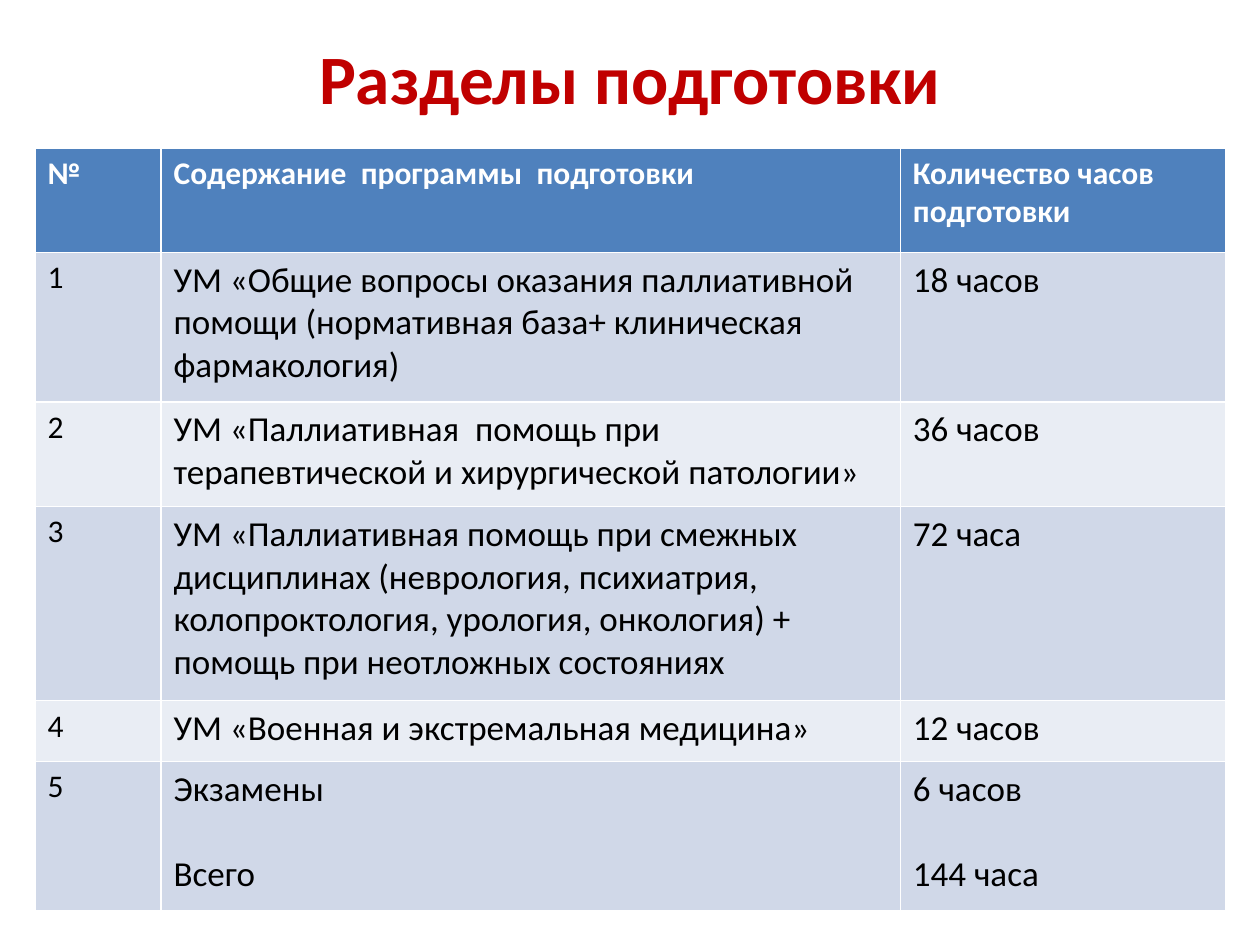
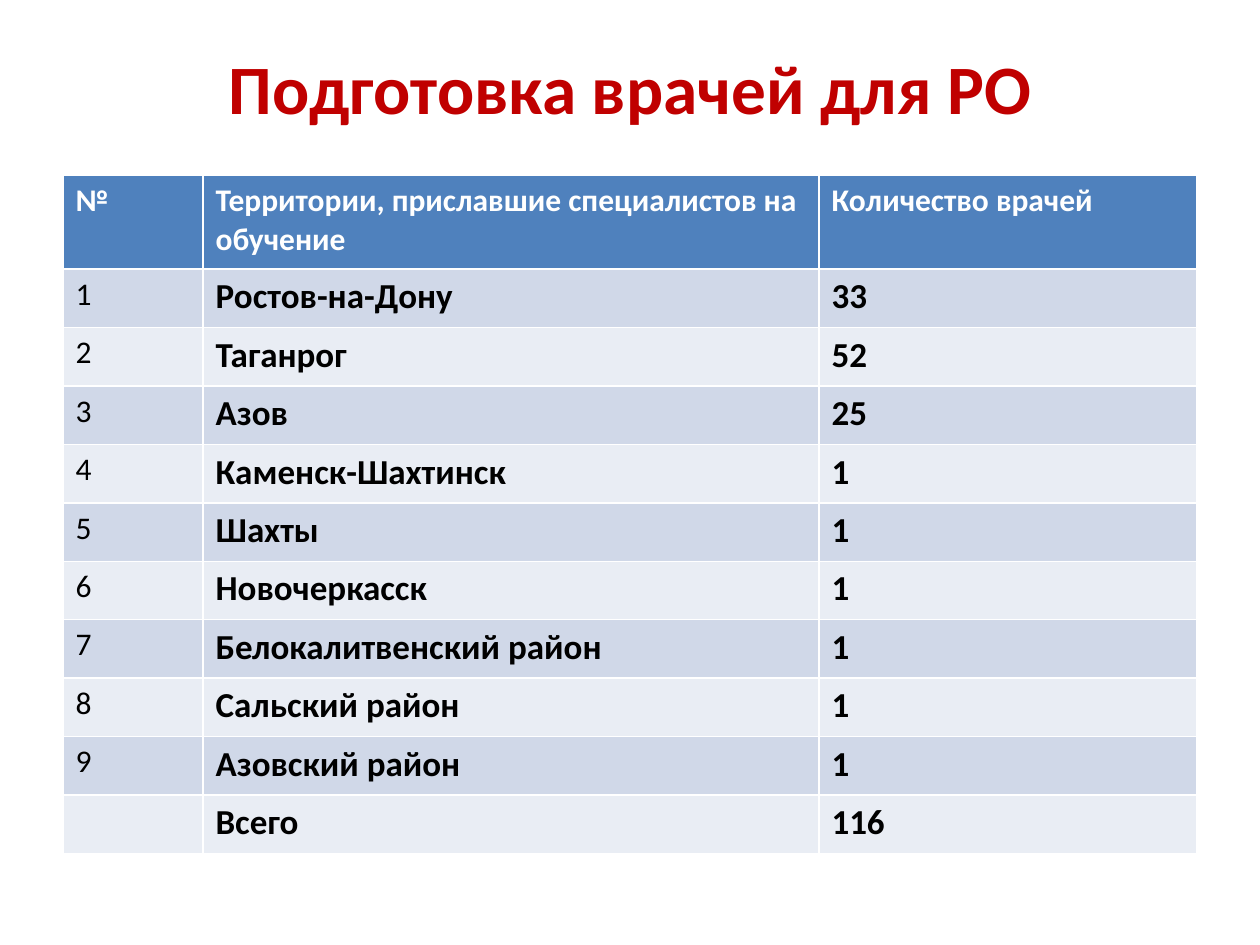
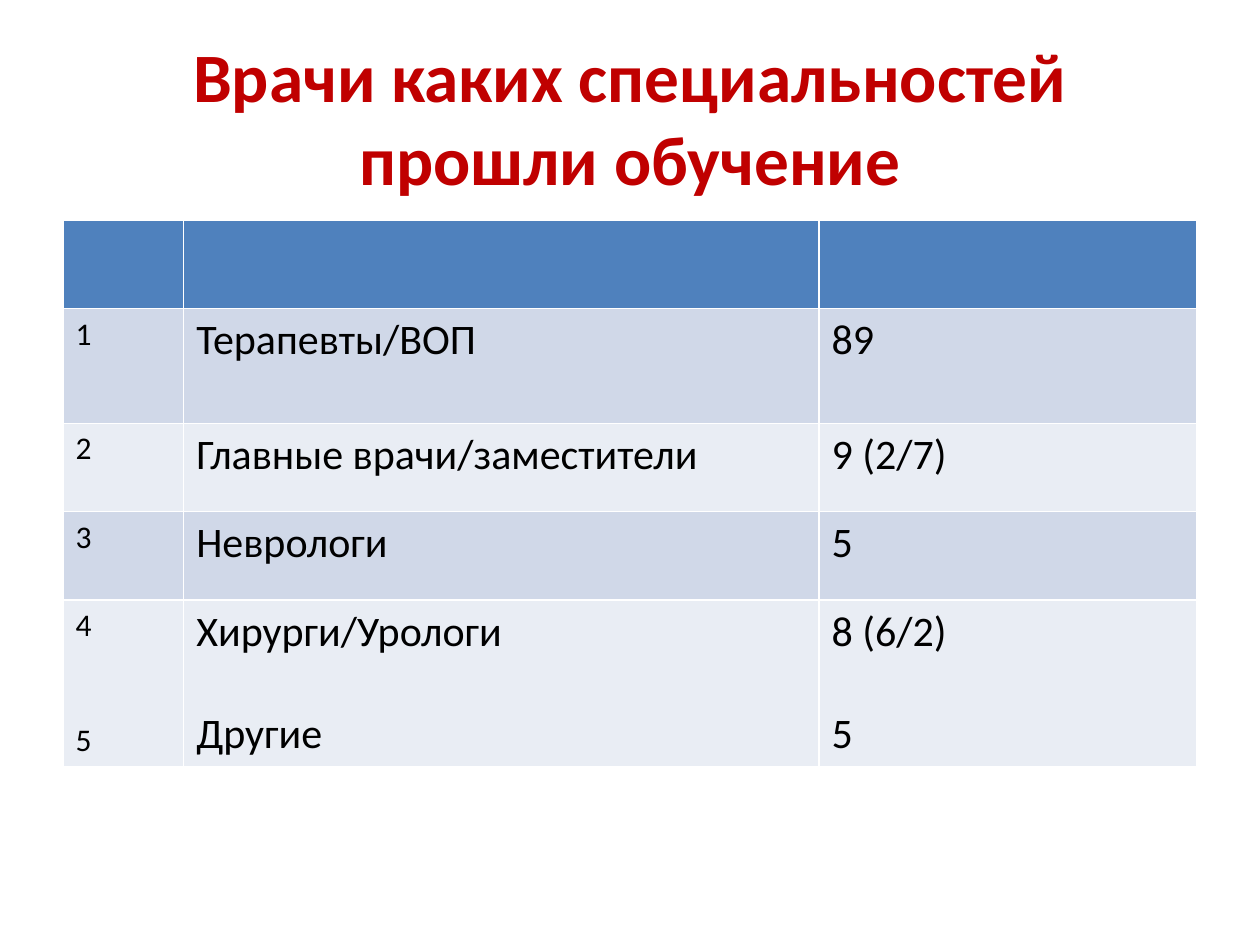
from dataclasses import dataclass

from pptx import Presentation
from pptx.dml.color import RGBColor
from pptx.enum.text import MSO_ANCHOR, MSO_AUTO_SIZE, PP_ALIGN
from pptx.util import Pt

MIDDLE = MSO_ANCHOR.MIDDLE
NO_FIT = MSO_AUTO_SIZE.NONE
LEFT, CENTER = PP_ALIGN.LEFT, PP_ALIGN.CENTER
FONT = "Calibri"
COLORS = {
    "title": "C00000",
    "header": "4F81BD",
    "odd": "D0D8E8",
    "even": "E9EDF4",
    "light": "FFFFFF",
    "dark": "000000",
}
TITLE_ONLY = 5
TITLE_LEFT, TITLE_TOP, TITLE_WIDTH = 36, 21.6, 648
TITLE_SIZE = 39.6
NUMBER_SIZE = 18
LINE_HEIGHT = 1.22


@dataclass(frozen=True)
class TableSlide:
    """A title above a numbered table."""

    title: str
    title_height: float
    left: float
    top: float
    columns: tuple[float, ...]
    heights: tuple[float, ...]
    rows: tuple[tuple[str, ...], ...]
    entry_size: float
    entry_bold: bool = False


SLIDES = (
    TableSlide(
        title="Разделы подготовки",
        title_height=44,
        left=20,
        top=84.5,
        columns=(72, 422.5, 186),
        heights=(59.75, 85.5, 59.75, 111, 34.75, 85.5),
        rows=(
            ("№", "Содержание  программы  подготовки", "Количество часов подготовки"),
            ("1", "УМ «Общие вопросы оказания паллиативной помощи "
                  "(нормативная база+ клиническая фармакология)", "18 часов"),
            ("2", "УМ «Паллиативная  помощь при терапевтической "
                  "и хирургической патологии»", "36 часов"),
            ("3", "УМ «Паллиативная помощь при смежных дисциплинах "
                  "(неврология, психиатрия, колопроктология, урология, онкология) "
                  "+ помощь при неотложных состояниях", "72 часа"),
            ("4", "УМ «Военная и экстремальная медицина»", "12 часов"),
            ("5", "Экзамены\nВсего", "6 часов\n144 часа"),
        ),
        entry_size=20,
    ),
    TableSlide(
        title="Подготовка врачей для РО",
        title_height=55.5,
        left=36,
        top=100.25,
        columns=(80, 352, 216),
        heights=(53.5,) + (33.4,) * 10,
        rows=(
            ("№", "Территории, приславшие специалистов на обучение", "Количество врачей"),
            ("1", "Ростов-на-Дону", "33"),
            ("2", "Таганрог", "52"),
            ("3", "Азов", "25"),
            ("4", "Каменск-Шахтинск", "1"),
            ("5", "Шахты", "1"),
            ("6", "Новочеркасск", "1"),
            ("7", "Белокалитвенский район", "1"),
            ("8", "Сальский район", "1"),
            ("9", "Азовский район", "1"),
            ("", "Всего", "116"),
        ),
        entry_size=20,
        entry_bold=True,
    ),
    TableSlide(
        title="Врачи каких специальностей прошли обучение",
        title_height=90,
        left=36,
        top=126,
        columns=(69, 363, 216),
        heights=(50.4, 65.6, 50.4, 50.4, 95),
        rows=(
            ("", "", ""),
            ("1", "Терапевты/ВОП", "89"),
            ("2", "Главные врачи/заместители", "9 (2/7)"),
            ("3", "Неврологи", "5"),
            ("4\n5", "Хирурги/Урологи\nДругие", "8 (6/2)\n5"),
        ),
        entry_size=24,
    ),
)


def write(frame, text: str, *, size: float, color: str, bold: bool = False,
          align=LEFT, gap: float = 0) -> None:
    """Write each line as a paragraph, with a gap between paragraphs."""
    for index, line in enumerate(text.split("\n")):
        para = frame.add_paragraph() if index else frame.paragraphs[0]
        para.alignment = align
        if index:
            para.space_before = Pt(gap)
        if line:
            span = para.add_run()
            span.text = line
            span.font.name = FONT
            span.font.size = Pt(size)
            span.font.bold = bold
            span.font.color.rgb = RGBColor.from_string(COLORS[color])


def add_title(page, item: TableSlide) -> None:
    """Place and write the title placeholder."""
    box = page.shapes.title
    box.left, box.top = Pt(TITLE_LEFT), Pt(TITLE_TOP)
    box.width, box.height = Pt(TITLE_WIDTH), Pt(item.title_height)
    frame = box.text_frame
    frame.word_wrap = True
    frame.auto_size = NO_FIT
    frame.vertical_anchor = MIDDLE
    write(frame, item.title, size=TITLE_SIZE, color="title", bold=True, align=CENTER)


def fill_cell(cell, item: TableSlide, row: int, column: int) -> None:
    """Colour a cell and write its text."""
    header = row == 0
    number = column == 0
    band = "header" if header else "odd" if row % 2 else "even"
    cell.fill.solid()
    cell.fill.fore_color.rgb = RGBColor.from_string(COLORS[band])
    size = NUMBER_SIZE if header or number else item.entry_size
    blank_lines = 2 if number else 1
    write(cell.text_frame, item.rows[row][column], size=size,
          color="light" if header else "dark",
          bold=header or (item.entry_bold and not number),
          gap=round(blank_lines * size * LINE_HEIGHT, 1))


def add_grid(page, item: TableSlide) -> None:
    """Add the table with its column widths and row heights."""
    table = page.shapes.add_table(
        len(item.rows), len(item.columns), Pt(item.left), Pt(item.top),
        Pt(sum(item.columns)), Pt(sum(item.heights))).table
    for column, width in zip(table.columns, item.columns):
        column.width = Pt(width)
    for row, height in zip(table.rows, item.heights):
        row.height = Pt(height)
    for row in range(len(item.rows)):
        for column in range(len(item.columns)):
            fill_cell(table.cell(row, column), item, row, column)


def main() -> None:
    """Build the deck and save it."""
    deck = Presentation()
    deck.slide_width, deck.slide_height = Pt(720), Pt(540)
    for item in SLIDES:
        page = deck.slides.add_slide(deck.slide_layouts[TITLE_ONLY])
        add_title(page, item)
        add_grid(page, item)
    deck.save("out.pptx")


if __name__ == "__main__":
    main()
